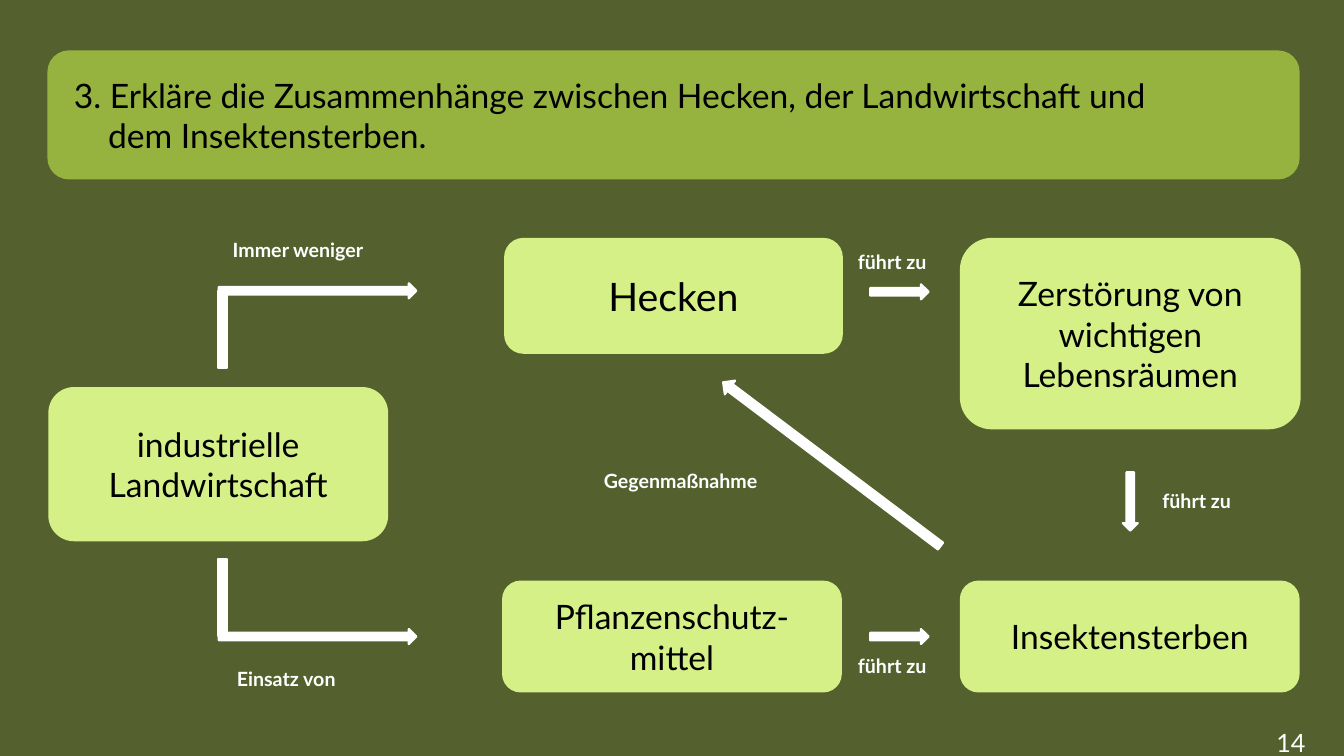
"""Build the slide on how hedges, farming and insect decline are connected."""
import pptx
import pptx.util
import pptx.dml.color
import pptx.enum.shapes
import pptx.enum.text

SCALE = 9144
FONT = "Lato"
MOSS = pptx.dml.color.RGBColor(0x54, 0x61, 0x2E)
LEAF = pptx.dml.color.RGBColor(0x96, 0xB3, 0x40)
LIME = pptx.dml.color.RGBColor(0xD5, 0xF0, 0x86)
WHITE = pptx.dml.color.RGBColor(0xFF, 0xFF, 0xFF)
BLACK = pptx.dml.color.RGBColor(0x00, 0x00, 0x00)
SHAPES = pptx.enum.shapes.MSO_SHAPE
ALIGN = pptx.enum.text.PP_ALIGN

TASK = (
    "3. Erkläre die Zusammenhänge zwischen Hecken, der Landwirtschaft und\n"
    "dem Insektensterben."
)
TASK_BOX = (47, 50, 1242, 128)
HANGING_INDENT = 34

TOPICS = [
    ("industrielle Landwirtschaft", 24, (48, 384, 337, 153)),
    ("Hecken", 28, (500, 236, 336, 115)),
    ("Pflanzenschutz-mittel", 24, (498, 576, 337, 111)),
    ("Insektensterben", 24, (952, 576, 337, 111)),
    ("Zerstörung von wichtigen Lebensräumen", 24, (952, 236, 338, 190)),
]

ARROWS = [
    ((690, 452, 270, 17), 217),
    ((863, 282, 58, 15), 0),
    ((863, 624, 58, 15), 0),
    ((1092, 490, 58, 15), 90),
    ((217, 624, 196, 15), 0),
    ((217, 281, 196, 15), 0),
]
STEMS = [(216, 289, 9, 76), (216, 555, 9, 76)]

LABELS = [
    ("führt zu", 14, True, (841, 243, 111, 34)),
    ("führt zu", 14, True, (1143, 480, 111, 34)),
    ("führt zu", 14, True, (841, 643, 111, 34)),
    ("Immer weniger", 14, True, (221, 231, 173, 34)),
    ("Einsatz von", 14, True, (225, 656, 169, 34)),
    ("Gegenmaßnahme", 14, True, (589, 460, 186, 34)),
    ("14", 18, False, (1256, 717, 55, 40)),
]


def px(*lengths):
    return [length * SCALE for length in lengths]


def write(part, text, size, color, align, bold=False):
    frame = part.text_frame
    frame.word_wrap = True
    frame.vertical_anchor = pptx.enum.text.MSO_ANCHOR.MIDDLE
    frame.text = text
    for paragraph in frame.paragraphs:
        paragraph.alignment = align
        for run in paragraph.runs:
            run.font.name = FONT
            run.font.size = pptx.util.Pt(size)
            run.font.bold = bold
            run.font.color.rgb = color


def add_block(slide, kind, box, fill, outlined=False):
    block = slide.shapes.add_shape(kind, *px(*box))
    block.shadow.inherit = False
    block.fill.solid()
    block.fill.fore_color.rgb = fill
    if outlined:
        block.line.color.rgb = fill
        block.line.width = pptx.util.Pt(1.5)
    else:
        block.line.fill.background()
    return block


def add_card(slide, text, size, box, fill, align):
    card = add_block(slide, SHAPES.ROUNDED_RECTANGLE, box, fill)
    write(card, text, size, BLACK, align)
    card.text_frame.margin_left = card.text_frame.margin_right = 20 * SCALE
    return card


def main():
    deck = pptx.Presentation()
    deck.slide_width, deck.slide_height = px(1333, 750)
    slide = deck.slides.add_slide(deck.slide_layouts[6])
    slide.background.fill.solid()
    slide.background.fill.fore_color.rgb = MOSS

    task = add_card(slide, TASK, 24, TASK_BOX, LEAF, ALIGN.LEFT)
    second_line = task.text_frame.paragraphs[1]
    second_line._p.get_or_add_pPr().set("marL", str(HANGING_INDENT * SCALE))

    for text, size, box in TOPICS:
        add_card(slide, text, size, box, LIME, ALIGN.CENTER)
    for box, angle in ARROWS:
        add_block(slide, SHAPES.RIGHT_ARROW, box, WHITE, True).rotation = angle
    for box in STEMS:
        add_block(slide, SHAPES.FLOWCHART_PROCESS, box, WHITE, True)
    for text, size, bold, box in LABELS:
        label = slide.shapes.add_textbox(*px(*box))
        write(label, text, size, WHITE, ALIGN.LEFT, bold)

    deck.save("out.pptx")


if __name__ == "__main__":
    main()
